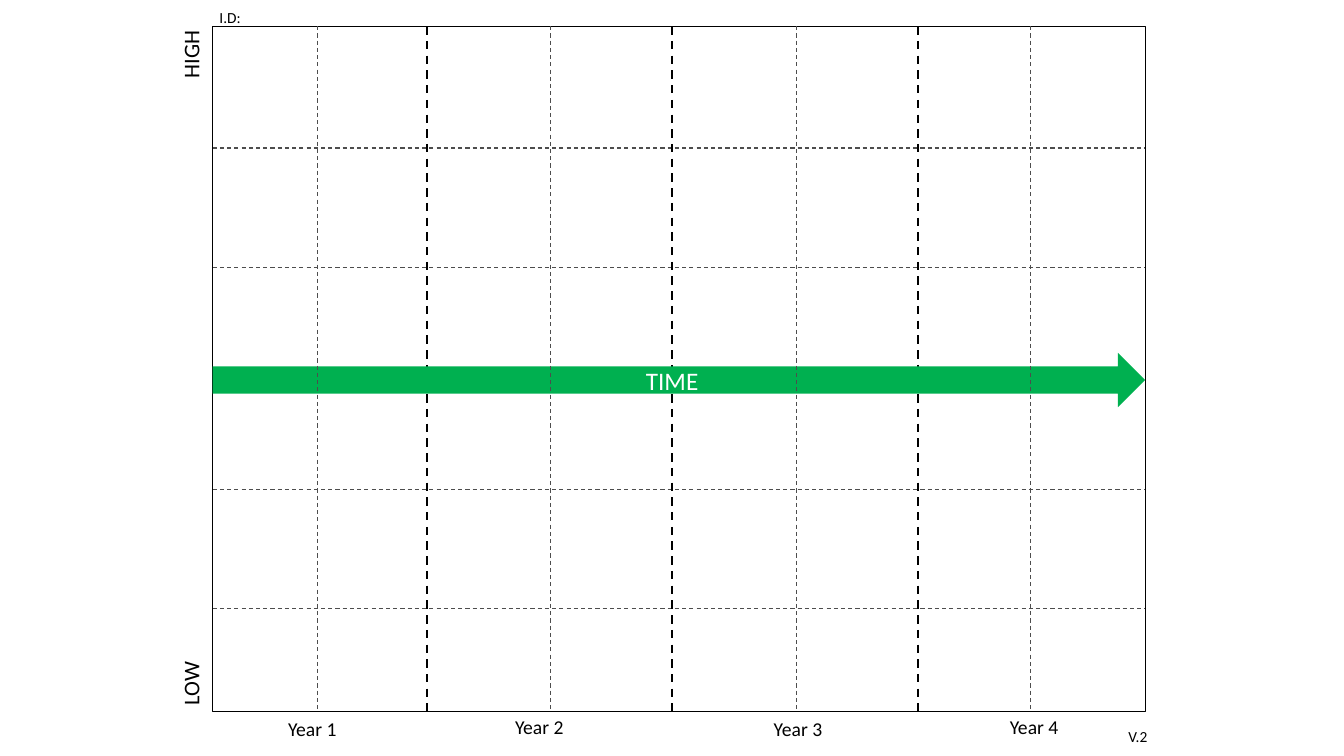
import pptx
import pptx.dml.color
import pptx.enum.dml
import pptx.enum.shapes
import pptx.enum.text
import pptx.oxml.ns
import pptx.util
from lxml import etree

Cm = pptx.util.Cm
Pt = pptx.util.Pt
SHAPE = pptx.enum.shapes.MSO_SHAPE
ALIGN = pptx.enum.text.PP_ALIGN
BLACK, GREY, GREEN, WHITE = "000000", "4D4D4D", "00B050", "FFFFFF"
LEFT, TOP, WIDE, HIGH = 5.36, 0.66, 23.5, 17.27
MID = 9.53


def tint(code):
    """Turn a hex string into a colour."""
    return pptx.dml.color.RGBColor.from_string(code)


def write(frame, text, size, code, align=ALIGN.LEFT):
    """Put one formatted run in a text frame."""
    para = frame.paragraphs[0]
    para.alignment = align
    run = para.add_run()
    run.text = text
    run.font.name = "Calibri"
    run.font.size = Pt(size)
    run.font.color.rgb = tint(code)


def label(slide, text, box, size, turn=0, wrap=True):
    """Add a text box, turned if asked."""
    item = slide.shapes.add_textbox(*map(Cm, box))
    item.rotation = turn
    item.text_frame.word_wrap = wrap
    item.text_frame.auto_size = pptx.enum.text.MSO_AUTO_SIZE.SHAPE_TO_FIT_TEXT
    write(item.text_frame, text, size, BLACK)


def dash(slide, start, end, code=GREY, width=0.75):
    """Draw a dashed straight line."""
    line = slide.shapes.add_connector(
        pptx.enum.shapes.MSO_CONNECTOR.STRAIGHT, *map(Cm, start + end))
    line.line.color.rgb = tint(code)
    line.line.width = Pt(width)
    line.line.dash_style = pptx.enum.dml.MSO_LINE.DASH
    etree.SubElement(line._element.spPr, pptx.oxml.ns.qn("a:effectLst"))


def frame(slide):
    """Draw the outline of the chart area."""
    rect = slide.shapes.add_shape(
        SHAPE.RECTANGLE, *map(Cm, (LEFT, TOP, WIDE, HIGH)))
    rect.shadow.inherit = False
    rect.fill.background()
    rect.line.color.rgb = tint(BLACK)
    rect.line.width = Pt(0.5)


def arrow(slide):
    """Draw the time arrow across the middle."""
    time = slide.shapes.add_shape(
        SHAPE.RIGHT_ARROW, *map(Cm, (LEFT, 8.89, WIDE, 1.37)))
    time.shadow.inherit = False
    time.fill.solid()
    time.fill.fore_color.rgb = tint(GREEN)
    time.line.fill.background()
    time.text_frame.vertical_anchor = pptx.enum.text.MSO_ANCHOR.MIDDLE
    write(time.text_frame, "TIME", 18, WHITE, ALIGN.CENTER)


def main():
    """Build the slide and save it."""
    deck = pptx.Presentation()
    deck.slide_width, deck.slide_height = Cm(33.87), Cm(19.05)
    slide = deck.slides.add_slide(deck.slide_layouts[6])

    label(slide, "I.D:", (5.28, 0.08, 1.3, 0.74), 11)
    label(slide, "V.2", (28.19, 18.19, 1.3, 0.74), 11)
    for step in (5.8, 2.8, -2.8, -5.8):
        dash(slide, (LEFT, MID + step), (LEFT + WIDE, MID + step))
    for x in (10.77, 16.94, 23.14):
        dash(slide, (x, TOP), (x, TOP + HIGH), BLACK, 1.5)
    frame(slide)
    arrow(slide)
    label(slide, "HIGH", (3.94, 0.89, 1.73, 0.94), 16, 270, False)
    label(slide, "LOW", (3.99, 16.74, 1.63, 0.94), 16, 270, False)
    spots = ((7.01, 17.93), (12.73, 17.88), (19.25, 17.93), (25.2, 17.88))
    for year, spot in enumerate(spots, 1):
        label(slide, f"Year {year}", spot + (2.08, 0.86), 14)
    for x in (8, 13.87, 20.07, 25.96):
        dash(slide, (x, TOP), (x, TOP + HIGH))

    deck.save("out.pptx")


if __name__ == "__main__":
    main()
